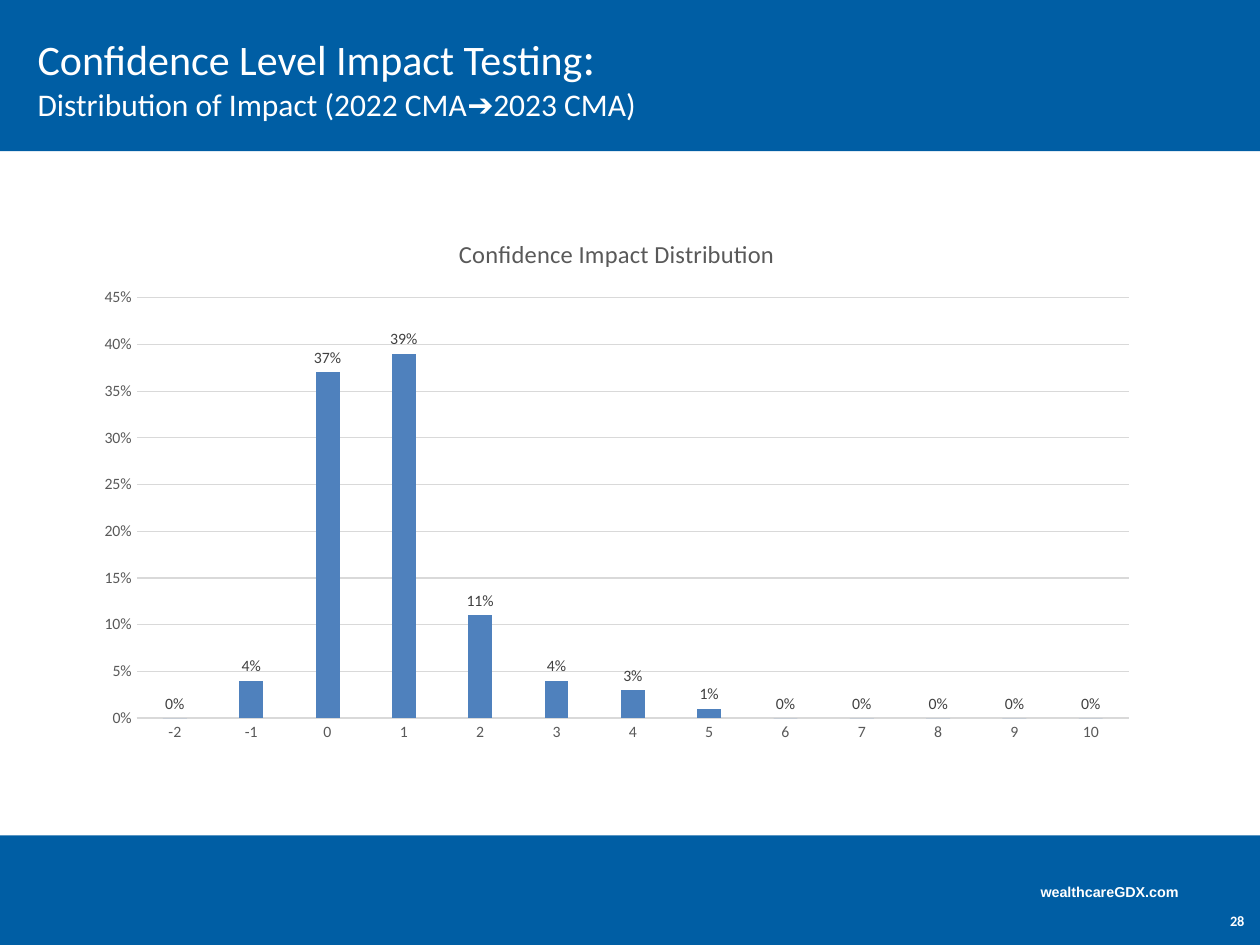
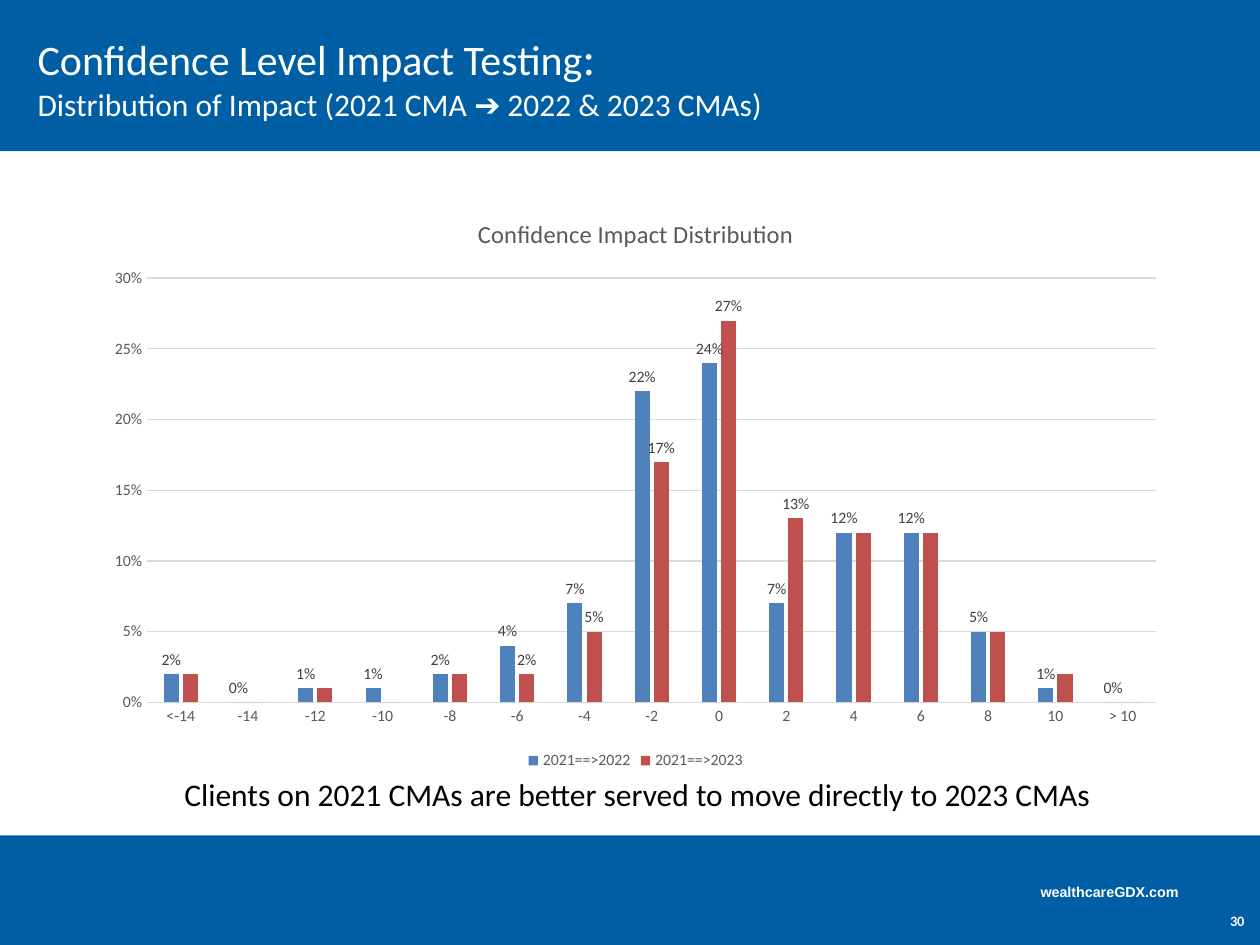
from dataclasses import dataclass

from pptx import Presentation
from pptx.chart.chart import Chart
from pptx.chart.data import CategoryChartData
from pptx.chart.series import BarSeries
from pptx.dml.color import RGBColor
from pptx.enum.chart import XL_CHART_TYPE as ChartType
from pptx.enum.chart import XL_LABEL_POSITION as LabelPosition
from pptx.enum.chart import XL_LEGEND_POSITION as LegendPosition
from pptx.enum.chart import XL_TICK_MARK as TickMark
from pptx.enum.shapes import MSO_SHAPE as Shape
from pptx.enum.text import MSO_ANCHOR as Anchor
from pptx.enum.text import PP_ALIGN as Align
from pptx.slide import Slide
from pptx.text.text import Font, TextFrame
from pptx.util import Inches, Pt

COLORS = {
    "band": "005EA4",
    "white": "FFFFFF",
    "black": "000000",
    "axis_text": "595959",
    "label_text": "404040",
    "grid": "D9D9D9",
    "blue": "4F81BD",
    "red": "C0504D",
}
BODY_FONT = "Calibri"
FOOTER_FONT = "Arial"


@dataclass(frozen=True)
class Area:
    left: float
    top: float
    width: float
    height: float

    def lengths(self) -> tuple[Inches, ...]:
        return tuple(Inches(n) for n in (self.left, self.top, self.width, self.height))


@dataclass(frozen=True)
class ImpactSeries:
    name: str
    percents: tuple[int, ...]
    color: str
    labelled_points: tuple[int, ...] | None = None


@dataclass(frozen=True)
class ImpactPage:
    number: int
    subtitle: str
    chart_area: Area
    categories: tuple[str, ...]
    series: tuple[ImpactSeries, ...]
    axis_max: float
    takeaway: str = ""


BANDS = (Area(0, 6.63, 10, 0.9), Area(0, 0, 10, 1.2))
TITLE_AREA = Area(0.2, 0, 9.8, 1.2)
SITE_AREA = Area(8.16, 6.96, 1.32, 0.24)
NUMBER_AREA = Area(9.64, 7.24, 0.36, 0.52)
TAKEAWAY_AREA = Area(1.24, 6.1, 7.64, 0.4)

PAGES = (
    ImpactPage(
        number=28,
        subtitle="Distribution of Impact (2022 CMA➔2023 CMA)",
        chart_area=Area(0.66, 1.71, 8.47, 4.26),
        categories=tuple(str(n) for n in range(-2, 11)),
        series=(
            ImpactSeries("Series 1", (0, 4, 37, 39, 11, 4, 3, 1, 0, 0, 0, 0, 0), "blue"),
        ),
        axis_max=0.45,
    ),
    ImpactPage(
        number=30,
        subtitle="Distribution of Impact (2021 CMA ➔ 2022 & 2023 CMAs)",
        chart_area=Area(0.74, 1.54, 8.61, 4.61),
        categories=("<-14", *(str(n) for n in range(-14, 11, 2)), "> 10"),
        series=(
            ImpactSeries(
                "2021==>2022",
                (2, 0, 1, 1, 2, 4, 7, 22, 24, 7, 12, 12, 5, 1, 0),
                "blue",
            ),
            ImpactSeries(
                "2021==>2023",
                (2, 0, 1, 0, 2, 2, 5, 17, 27, 13, 12, 12, 5, 2, 0),
                "red",
                labelled_points=(5, 6, 7, 8, 9),
            ),
        ),
        axis_max=0.3,
        takeaway="Clients on 2021 CMAs are better served to move directly to 2023 CMAs",
    ),
)


def rgb(name: str) -> RGBColor:
    return RGBColor.from_string(COLORS[name])


def style_font(
    font: Font, size: float, color: str, name: str = BODY_FONT, bold: bool = False
) -> None:
    font.name = name
    font.size = Pt(size)
    font.bold = bold
    font.color.rgb = rgb(color)


def add_text_frame(slide: Slide, area: Area, wrap: bool = True) -> TextFrame:
    frame = slide.shapes.add_textbox(*area.lengths()).text_frame
    frame.word_wrap = wrap
    return frame


def add_band(slide: Slide, area: Area) -> None:
    band = slide.shapes.add_shape(Shape.RECTANGLE, *area.lengths())
    band.shadow.inherit = False
    band.fill.solid()
    band.fill.fore_color.rgb = rgb("band")
    band.line.fill.background()


def add_title(slide: Slide, subtitle: str) -> None:
    frame = add_text_frame(slide, TITLE_AREA)
    frame.vertical_anchor = Anchor.MIDDLE
    para = frame.paragraphs[0]
    for text, size in (("Confidence Level Impact Testing", 24), (":", 27), (subtitle, 18)):
        if text == subtitle:
            para.add_line_break()
        span = para.add_run()
        span.text = text
        style_font(span.font, size, "white")


def add_footer(slide: Slide, number: int) -> None:
    site = add_text_frame(slide, SITE_AREA, wrap=False).paragraphs[0]
    site.text = "wealthcareGDX.com"
    style_font(site.font, 8.2, "white", FOOTER_FONT, bold=True)

    frame = add_text_frame(slide, NUMBER_AREA)
    frame.margin_left = frame.margin_right = frame.margin_top = frame.margin_bottom = 0
    para = frame.paragraphs[0]
    para.text = str(number)
    para.alignment = Align.CENTER
    style_font(para.font, 8.2, "white", bold=True)


def style_axes(chart: Chart, axis_max: float) -> None:
    for axis in (chart.category_axis, chart.value_axis):
        axis.major_tick_mark = axis.minor_tick_mark = TickMark.NONE
        style_font(axis.tick_labels.font, 9, "axis_text")

    values = chart.value_axis
    values.minimum_scale = 0
    values.maximum_scale = axis_max
    values.major_unit = 0.05
    values.tick_labels.number_format = "0%"
    values.tick_labels.number_format_is_linked = False
    values.format.line.fill.background()
    for line in (chart.category_axis.format.line, values.major_gridlines.format.line):
        line.color.rgb = rgb("grid")
        line.width = Pt(0.75)


def style_series(bars: BarSeries, series: ImpactSeries) -> None:
    bars.format.fill.solid()
    bars.format.fill.fore_color.rgb = rgb(series.color)
    bars.invert_if_negative = False

    labels = bars.data_labels
    labels.number_format = "0%"
    labels.number_format_is_linked = False
    labels.show_value = series.labelled_points is None
    style_font(labels.font, 9, "label_text")
    if series.labelled_points is None:
        labels.position = LabelPosition.OUTSIDE_END
    for index in series.labelled_points or ():
        label = bars.points[index].data_label
        style_font(label.font, 9, "label_text")
        label.position = LabelPosition.OUTSIDE_END


def add_impact_chart(slide: Slide, page: ImpactPage) -> None:
    data = CategoryChartData(number_format="0%")
    data.categories = page.categories
    for series in page.series:
        data.add_series(series.name, [percent / 100 for percent in series.percents])
    chart = slide.shapes.add_chart(
        ChartType.COLUMN_CLUSTERED, *page.chart_area.lengths(), data
    ).chart
    style_font(chart.font, 10, "black")

    chart.has_title = True
    heading = chart.chart_title.text_frame.paragraphs[0]
    heading.text = "Confidence Impact Distribution"
    style_font(heading.font, 14, "axis_text")

    chart.has_legend = len(page.series) > 1
    if chart.has_legend:
        chart.legend.position = LegendPosition.BOTTOM
        chart.legend.include_in_layout = False
        style_font(chart.legend.font, 9, "axis_text")

    style_axes(chart, page.axis_max)
    plot = chart.plots[0]
    plot.gap_width = 219
    plot.overlap = -27
    plot.vary_by_categories = False
    for bars, series in zip(plot.series, page.series):
        style_series(bars, series)


def add_takeaway(slide: Slide, text: str) -> None:
    para = add_text_frame(slide, TAKEAWAY_AREA).paragraphs[0]
    para.text = text
    para.alignment = Align.CENTER
    style_font(para.font, 18, "black")


def main() -> None:
    deck = Presentation()
    deck.slide_width = Inches(10)
    deck.slide_height = Inches(7.5)
    for page in PAGES:
        slide = deck.slides.add_slide(deck.slide_layouts[6])
        for area in BANDS:
            add_band(slide, area)
        add_footer(slide, page.number)
        add_title(slide, page.subtitle)
        add_impact_chart(slide, page)
        if page.takeaway:
            add_takeaway(slide, page.takeaway)
    deck.save("out.pptx")


if __name__ == "__main__":
    main()
